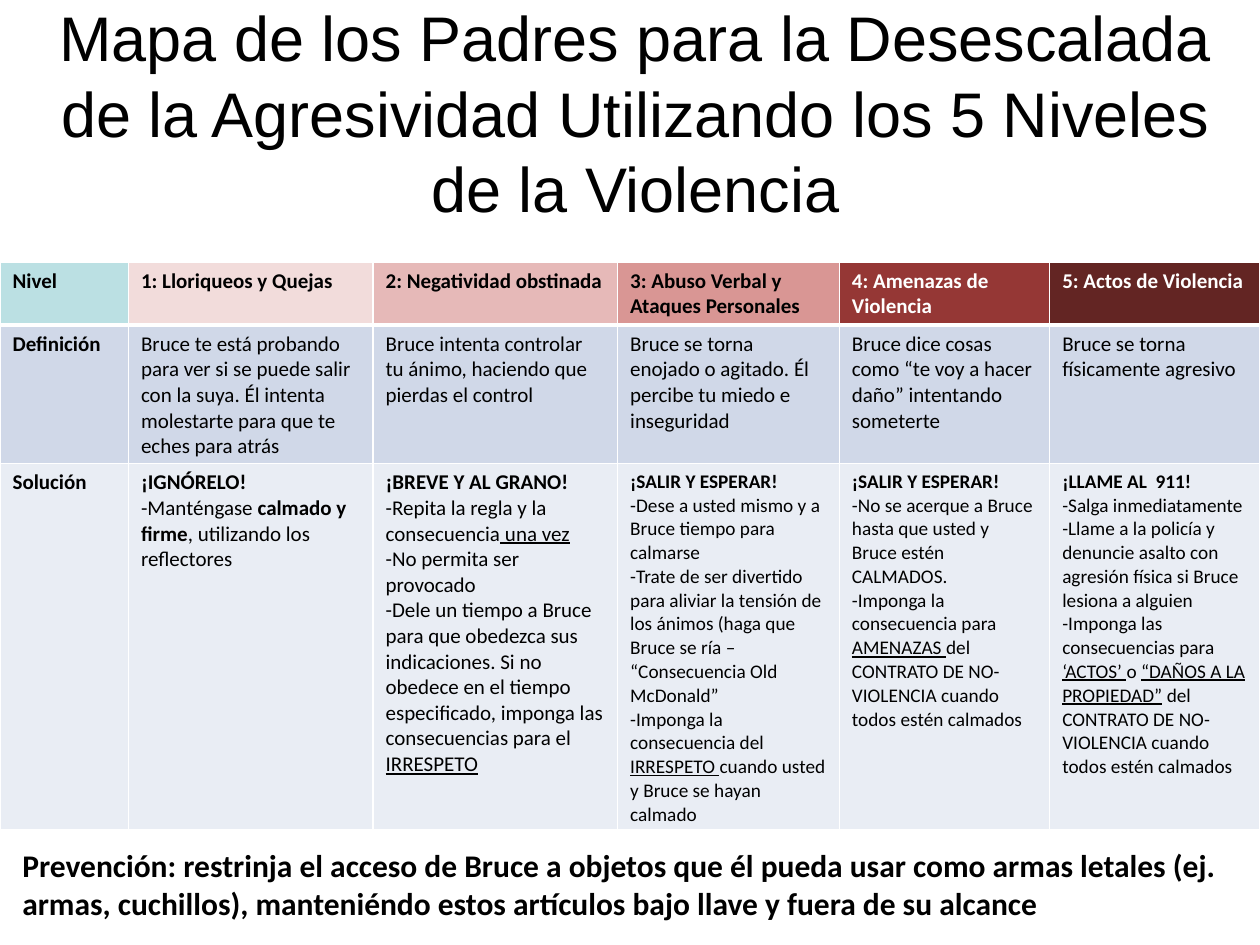
"""Build a slide with a parents' map of the five levels of violence."""
from dataclasses import dataclass

from lxml import etree
from pptx import Presentation
from pptx.dml.color import RGBColor
from pptx.enum.text import MSO_ANCHOR, PP_ALIGN
from pptx.oxml.ns import qn
from pptx.util import Cm, Pt

LEFT, CENTER = PP_ALIGN.LEFT, PP_ALIGN.CENTER
TOP, MIDDLE = MSO_ANCHOR.TOP, MSO_ANCHOR.MIDDLE

BLACK = RGBColor(0x00, 0x00, 0x00)
WHITE = RGBColor(0xFF, 0xFF, 0xFF)
AQUA = RGBColor(0xBB, 0xE0, 0xE3)
PALE_ROSE = RGBColor(0xF2, 0xDC, 0xDB)
ROSE = RGBColor(0xE6, 0xB9, 0xB8)
CORAL = RGBColor(0xD9, 0x96, 0x94)
RED = RGBColor(0x95, 0x37, 0x35)
DARK_RED = RGBColor(0x63, 0x25, 0x23)
BLUE_GRAY = RGBColor(0xD0, 0xD8, 0xE8)
PALE_BLUE = RGBColor(0xE9, 0xED, 0xF4)

COLUMN_WIDTHS = (2.59, 4.93, 4.93, 4.47, 4.24, 4.24)
ROW_HEIGHTS = (1.27, 2.79, 7.39)
THIN, THICK = 1, 3


@dataclass(frozen=True)
class Run:
    text: str
    bold: bool = False
    underline: bool = False


@dataclass(frozen=True)
class TextStyle:
    size: float
    font: str = "Calibri"
    color: RGBColor = BLACK
    align: PP_ALIGN = LEFT


@dataclass(frozen=True)
class Level:
    name: str
    fill: RGBColor
    color: RGBColor
    definition: Run
    solution: tuple[tuple[Run, ...], ...]
    solution_size: float


def bold(text: str) -> Run:
    return Run(text, bold=True)


def underlined(text: str) -> Run:
    return Run(text, underline=True)


LEVELS = (
    Level("Nivel", AQUA, BLACK, bold("Definición"), ((bold("Solución"),),), 12),
    Level(
        "1: Lloriqueos y Quejas", PALE_ROSE, BLACK,
        Run("Bruce te está probando para ver si se puede salir con la suya. "
            "Él intenta molestarte para que te eches para atrás"),
        (
            (bold("¡IGNÓRELO!"),),
            (Run("-Manténgase"), bold(" calmado y firme"), Run(", utilizando los reflectores")),
        ), 12),
    Level(
        "2: Negatividad obstinada", ROSE, BLACK,
        Run("Bruce intenta controlar tu ánimo, haciendo que pierdas el control"),
        (
            (bold("¡BREVE Y AL GRANO!"),),
            (Run("-Repita la regla y la consecuencia"), underlined(" una vez")),
            (Run("-No permita ser provocado"),),
            (Run("-Dele un tiempo a Bruce para que obedezca sus indicaciones. Si no obedece "
                 "en el tiempo especificado, imponga las consecuencias para el "),
             underlined("IRRESPETO")),
        ), 12),
    Level(
        "3: Abuso Verbal y Ataques Personales", CORAL, BLACK,
        Run("Bruce se torna enojado o agitado. Él percibe tu miedo e inseguridad"),
        (
            (bold("¡SALIR Y ESPERAR!"),),
            (Run("-Dese a usted mismo y a Bruce tiempo para calmarse"),),
            (Run("-Trate de ser divertido para aliviar la tensión de los ánimos "
                 "(haga que Bruce se ría – “Consecuencia Old McDonald”"),),
            (Run("-Imponga la consecuencia del "), underlined("IRRESPETO "),
             Run("cuando usted y Bruce se hayan calmado")),
        ), 11),
    Level(
        "4: Amenazas de Violencia", RED, WHITE,
        Run("Bruce dice cosas como “te voy a hacer daño” intentando someterte"),
        (
            (bold("¡SALIR Y ESPERAR!"),),
            (Run("-No se acerque a Bruce hasta que usted y Bruce estén CALMADOS."),),
            (Run("-Imponga la consecuencia para "), underlined("AMENAZAS "),
             Run("del CONTRATO DE NO-VIOLENCIA cuando todos estén calmados")),
        ), 11),
    Level(
        "5: Actos de Violencia", DARK_RED, WHITE,
        Run("Bruce se torna físicamente agresivo"),
        (
            (bold("¡LLAME AL  911!"),),
            (Run("-Salga inmediatamente"),),
            (Run("-Llame a la policía y denuncie asalto con agresión física "
                 "si Bruce lesiona a alguien"),),
            (Run("-Imponga las consecuencias para "), underlined("‘ACTOS’ "), Run("o "),
             underlined("“DAÑOS A LA PROPIEDAD”"),
             Run(" del CONTRATO DE NO-VIOLENCIA cuando todos estén calmados")),
        ), 11),
)


def write_text(text_frame, paragraphs: tuple[tuple[Run, ...], ...], style: TextStyle) -> None:
    for index, runs in enumerate(paragraphs):
        paragraph = text_frame.add_paragraph() if index else text_frame.paragraphs[0]
        paragraph.alignment = style.align
        for item in runs:
            run = paragraph.add_run()
            run.text = item.text
            run.font.name = style.font
            run.font.size = Pt(style.size)
            run.font.bold = item.bold
            run.font.underline = item.underline
            run.font.color.rgb = style.color


def add_text(slide, box: tuple[float, ...], run: Run, style: TextStyle, anchor: MSO_ANCHOR) -> None:
    shape = slide.shapes.add_textbox(*(Cm(length) for length in box))
    shape.text_frame.word_wrap = True
    shape.text_frame.vertical_anchor = anchor
    write_text(shape.text_frame, ((run,),), style)


def set_borders(cell, top: float, bottom: float) -> None:
    properties = cell._tc.get_or_add_tcPr()
    for side, width in (("L", THIN), ("R", THIN), ("T", top), ("B", bottom)):
        line = etree.SubElement(properties, qn(f"a:ln{side}"), w=str(Pt(width)))
        solid_fill = etree.SubElement(line, qn("a:solidFill"))
        etree.SubElement(solid_fill, qn("a:srgbClr"), val=str(WHITE))


def fill_cell(cell, paragraphs: tuple[tuple[Run, ...], ...], style: TextStyle,
              fill: RGBColor, top: float = THIN, bottom: float = THIN) -> None:
    set_borders(cell, top, bottom)
    cell.fill.solid()
    cell.fill.fore_color.rgb = fill
    write_text(cell.text_frame, paragraphs, style)


def add_level_table(slide) -> None:
    table = slide.shapes.add_table(
        len(ROW_HEIGHTS), len(LEVELS), Cm(0), Cm(5.28),
        Cm(sum(COLUMN_WIDTHS)), Cm(sum(ROW_HEIGHTS))).table
    table.first_row = False
    table.horz_banding = False
    for row, height in zip(table.rows, ROW_HEIGHTS):
        row.height = Cm(height)
    for index, (level, width) in enumerate(zip(LEVELS, COLUMN_WIDTHS)):
        table.columns[index].width = Cm(width)
        fill_cell(table.cell(0, index), ((bold(level.name),),),
                  TextStyle(12, color=level.color), level.fill, bottom=THICK)
        fill_cell(table.cell(1, index), ((level.definition,),),
                  TextStyle(12), BLUE_GRAY, top=THICK)
        fill_cell(table.cell(2, index), level.solution,
                  TextStyle(level.solution_size), PALE_BLUE)


def main() -> None:
    presentation = Presentation()
    presentation.slide_width, presentation.slide_height = Cm(25.4), Cm(19.05)
    slide = presentation.slides.add_slide(presentation.slide_layouts[6])
    add_text(slide, (0.53, 0.2, 24.56, 4.11),
             Run("Mapa de los Padres para la Desescalada de la Agresividad "
                 "Utilizando los 5 Niveles de la Violencia"),
             TextStyle(36, "Arial", align=CENTER), MIDDLE)
    add_level_table(slide)
    add_text(slide, (0.2, 16.94, 25.2, 1.8),
             bold("Prevención: restrinja el acceso de Bruce a objetos que él pueda usar como "
                  "armas letales (ej. armas, cuchillos), manteniéndo estos artículos bajo "
                  "llave y fuera de su alcance"),
             TextStyle(18), TOP)
    presentation.save("out.pptx")


if __name__ == "__main__":
    main()
